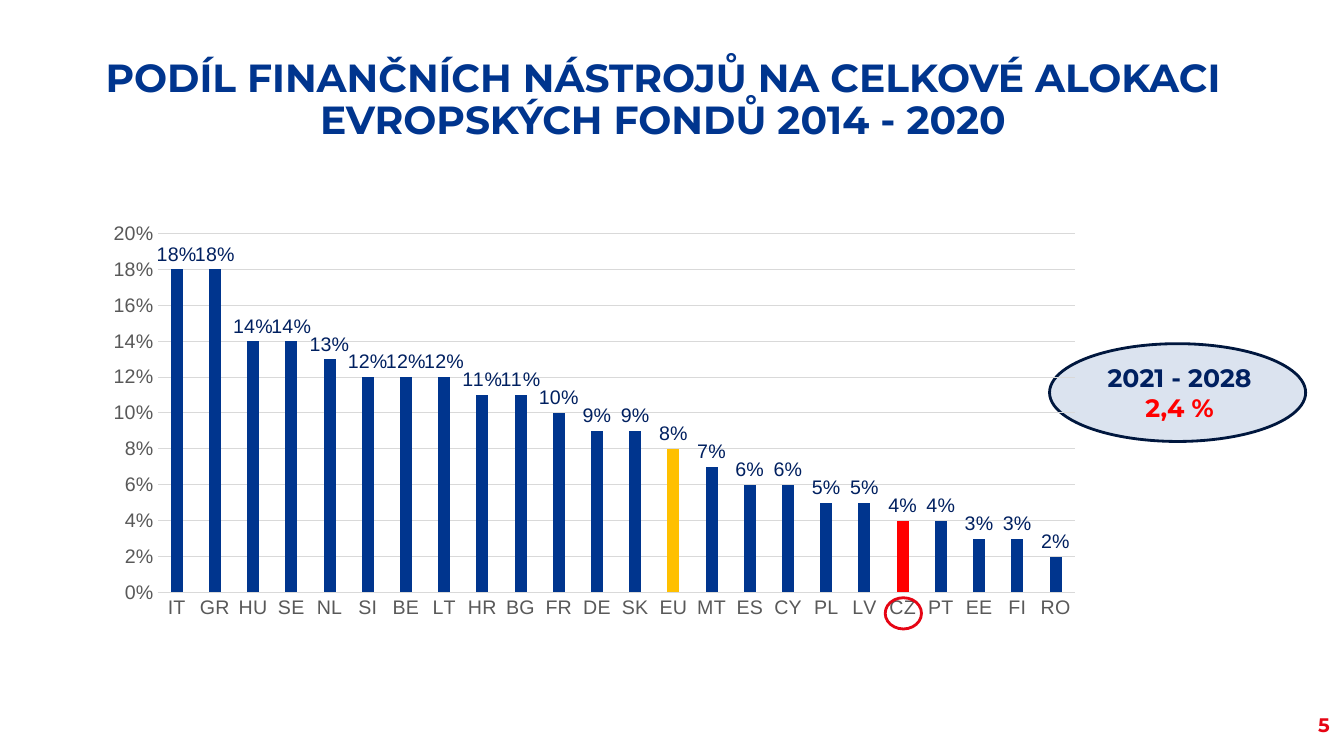
from dataclasses import dataclass

from lxml.etree import SubElement
from pptx import Presentation
from pptx.chart.data import CategoryChartData
from pptx.dml.color import RGBColor
from pptx.enum.chart import XL_CHART_TYPE, XL_LABEL_POSITION, XL_TICK_MARK
from pptx.enum.shapes import MSO_SHAPE
from pptx.enum.text import MSO_ANCHOR, PP_ALIGN
from pptx.oxml.ns import qn
from pptx.util import Inches, Pt


@dataclass(frozen=True)
class Theme:
    blue: str = "00358E"
    navy: str = "002060"
    edge: str = "00173E"
    pale: str = "DBE3EF"
    red: str = "FF0000"
    mark: str = "E60514"
    gold: str = "FFC000"
    gray: str = "595959"
    grid: str = "D9D9D9"
    head: str = "Montserrat"
    body: str = "Arial"
    title: int = 28
    note: int = 18
    small: int = 14


THEME = Theme()
SHARES = {
    "IT": 18, "GR": 18, "HU": 14, "SE": 14, "NL": 13, "SI": 12,
    "BE": 12, "LT": 12, "HR": 11, "BG": 11, "FR": 10, "DE": 9,
    "SK": 9, "EU": 8, "MT": 7, "ES": 6, "CY": 6, "PL": 5,
    "LV": 5, "CZ": 4, "PT": 4, "EE": 3, "FI": 3, "RO": 2,
}
ACCENTS = {"EU": THEME.gold, "CZ": THEME.red}
PLOT = {"x": 0.079, "y": 0.13, "w": 0.906, "h": 0.774}


def color(code):
    return RGBColor.from_string(code)


def style(font, face, size, code, bold=False):
    font.name = face
    font.size = Pt(size)
    font.bold = bold
    font.color.rgb = color(code)


def add_text(slide, box, lines, size, align, pad=0.05, anchor=MSO_ANCHOR.TOP, space=1.0):
    frame = slide.shapes.add_textbox(*map(Inches, box)).text_frame
    frame.word_wrap = True
    frame.vertical_anchor = anchor
    frame.margin_left = frame.margin_right = Inches(pad)
    frame.margin_top = frame.margin_bottom = Inches(0.05)
    frame.text = "\n".join(text for text, code in lines)
    for par, (text, code) in zip(frame.paragraphs, lines):
        par.alignment = align
        par.line_spacing = space
        for run in par.runs:
            style(run.font, THEME.head, size, code, True)


def add_oval(slide, box, edge, fill=None):
    oval = slide.shapes.add_shape(MSO_SHAPE.OVAL, *map(Inches, box))
    oval.shadow.inherit = False
    oval.line.color.rgb = color(edge)
    oval.line.width = Pt(2)
    if fill:
        oval.fill.solid()
        oval.fill.fore_color.rgb = color(fill)
    else:
        oval.fill.background()


def set_plot(chart):
    area = chart.element.chart.plotArea
    old = area.find(qn("c:layout"))
    if old is not None:
        area.remove(old)
    layout = SubElement(area, qn("c:layout"))
    area.insert(0, layout)
    manual = SubElement(layout, qn("c:manualLayout"))
    rules = {"layoutTarget": "inner", "xMode": "edge", "yMode": "edge", **PLOT}
    for tag, value in rules.items():
        SubElement(manual, qn(f"c:{tag}")).set("val", str(value))


def set_axes(chart):
    for axis in (chart.category_axis, chart.value_axis):
        axis.major_tick_mark = axis.minor_tick_mark = XL_TICK_MARK.NONE
        style(axis.tick_labels.font, THEME.body, THEME.small, THEME.gray)
    scale = chart.value_axis
    scale.minimum_scale, scale.maximum_scale = 0, 0.2
    scale.major_unit = 0.02
    scale.tick_labels.number_format = "0%"
    scale.tick_labels.number_format_is_linked = False
    scale.format.line.fill.background()
    for line in (chart.category_axis.format.line, scale.major_gridlines.format.line):
        line.color.rgb = color(THEME.grid)
        line.width = Pt(0.75)


def add_bars(slide, box):
    data = CategoryChartData(number_format="0%")
    data.categories = list(SHARES)
    data.add_series("Series 1", [share / 100 for share in SHARES.values()])
    chart = slide.shapes.add_chart(
        XL_CHART_TYPE.COLUMN_CLUSTERED, *map(Inches, box), data
    ).chart
    chart.has_legend = chart.has_title = False
    style(chart.font, THEME.body, THEME.small, THEME.gray)
    set_plot(chart)
    set_axes(chart)

    plot = chart.plots[0]
    plot.vary_by_categories = False
    plot.gap_width, plot.overlap = 219, -27
    bars = plot.series[0]
    bars.format.fill.solid()
    bars.format.fill.fore_color.rgb = color(THEME.blue)
    for land, code in ACCENTS.items():
        fill = bars.points[list(SHARES).index(land)].format.fill
        fill.solid()
        fill.fore_color.rgb = color(code)

    labels = bars.data_labels
    labels.show_value = True
    labels.position = XL_LABEL_POSITION.OUTSIDE_END
    labels.number_format = "0%"
    labels.number_format_is_linked = False
    style(labels.font, THEME.body, THEME.small, THEME.navy)


def main():
    deck = Presentation()
    deck.slide_width, deck.slide_height = Inches(13.33), Inches(7.5)
    slide = deck.slides.add_slide(deck.slide_layouts[6])

    add_oval(slide, (10.41, 3.41, 2.54, 0.97), THEME.edge, THEME.pale)
    title = "PODÍL FINANČNÍCH NÁSTROJŮ NA CELKOVÉ ALOKACI EVROPSKÝCH FONDŮ 2014 - 2020"
    add_text(slide, (-0.09, 0.53, 13.33, 1.37), [(title, THEME.blue)],
             THEME.title, PP_ALIGN.CENTER, space=0.9)
    add_text(slide, (12.61, 7.02, 0.63, 0.34), [("5", THEME.mark)],
             THEME.small, PP_ALIGN.RIGHT, anchor=MSO_ANCHOR.MIDDLE)
    add_bars(slide, (0.77, 1.72, 10.04, 4.6))
    add_text(slide, (10.62, 3.54, 2.16, 0.71),
             [("2021 - 2028", THEME.navy), ("2,4 %", THEME.red)],
             THEME.note, PP_ALIGN.CENTER, pad=0.1)
    add_oval(slide, (8.78, 5.93, 0.36, 0.31), THEME.mark)

    deck.save("out.pptx")


if __name__ == "__main__":
    main()
